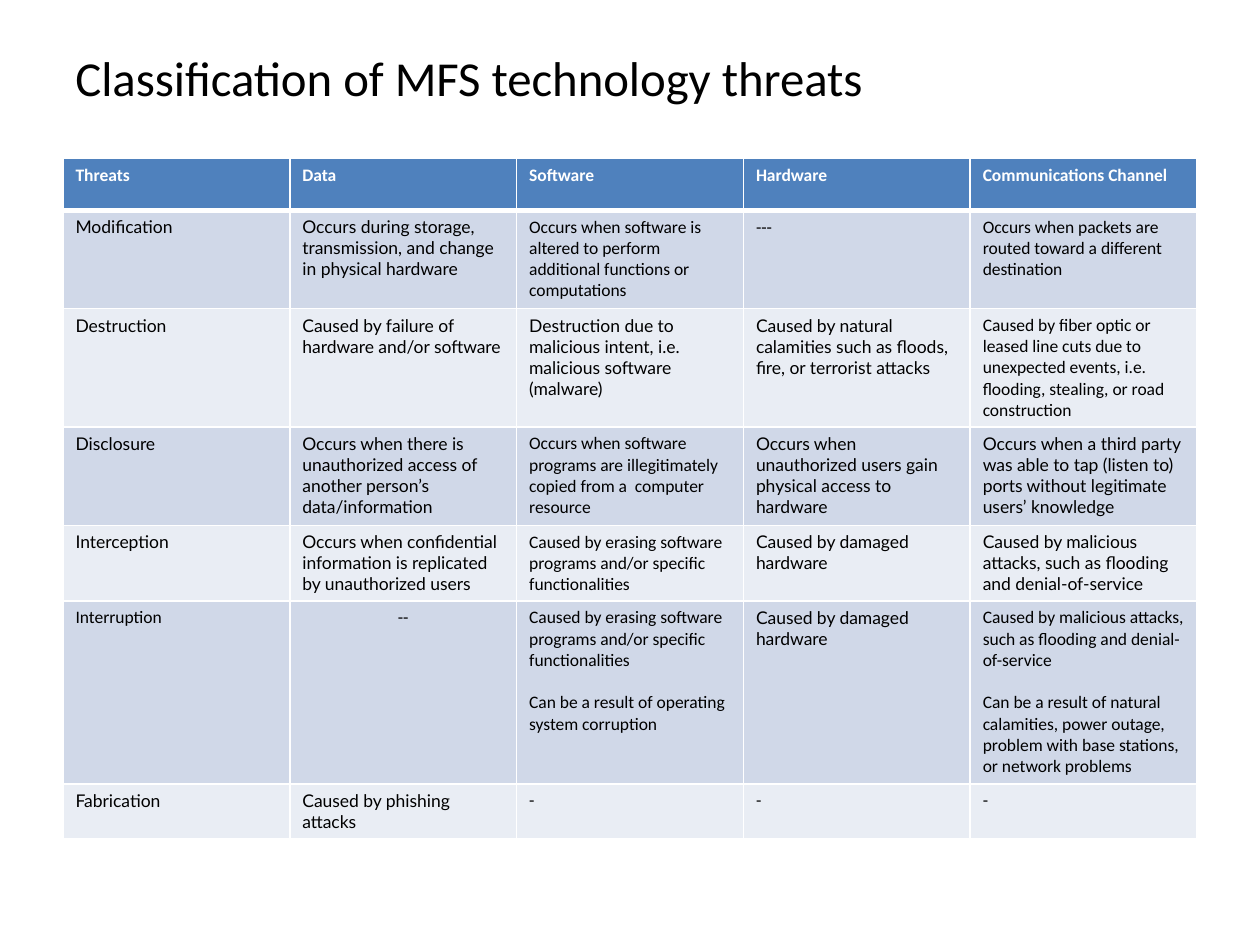
import pptx
import pptx.util
import pptx.dml.color
import pptx.enum.text
import pptx.oxml
import pptx.oxml.ns
from pptx.util import Inches

COLORS = {"white": "FFFFFF", "black": "000000", "header": "4F81BD",
          "odd": "D0D8E8", "even": "E9EDF4"}
CALIBRI, LATO = "Calibri", "Lato"
HEADINGS = ["Threats", "Data", "Software", "Hardware", "Communications Channel"]
ERASING = "Caused by erasing software programs and/or specific functionalities"
DAMAGED = "Caused by damaged hardware"
FLOODING = "Caused by malicious attacks, such as flooding and denial-of-service"

# Row height, fonts by column (C = Calibri, L = Lato), cell texts;
# a list holds the paragraphs of one cell.
THREATS = [
    (0.78, "LLCCC", [
        "Modification",
        "Occurs during storage, transmission, and change in physical hardware",
        "Occurs when software is altered to perform additional functions or computations",
        "---",
        "Occurs when packets are routed toward a different destination"]),
    (0.94, "LLLLC", [
        "Destruction",
        "Caused by failure of hardware and/or software",
        "Destruction due to malicious intent, i.e. malicious software (malware)",
        "Caused by natural calamities such as floods, fire, or terrorist attacks",
        "Caused by fiber optic or leased line cuts due to unexpected events, i.e. "
        "flooding, stealing, or road construction"]),
    (0.78, "LLCLL", [
        "Disclosure",
        "Occurs when there is unauthorized access of another person’s data/information",
        "Occurs when software programs are illegitimately copied from a  computer resource",
        "Occurs when unauthorized users gain physical access to hardware",
        "Occurs when a third party was able to tap (listen to) ports without "
        "legitimate users’ knowledge"]),
    (0.6, "LLCLL", [
        "Interception",
        "Occurs when confidential information is replicated by unauthorized users",
        ERASING, DAMAGED, FLOODING]),
    (1.45, "CCCLC", [
        "Interruption",
        "--",
        [ERASING, "Can be a result of operating system corruption"],
        DAMAGED,
        [FLOODING, "Can be a result of natural calamities, power outage, problem with "
                   "base stations, or network problems"]]),
    (0.43, "LLCCC", ["Fabrication", "Caused by phishing attacks", "-", "-", "-"]),
]


def rgb(name):
    return pptx.dml.color.RGBColor.from_string(COLORS[name])


def add_run(paragraph, text, font, size, color, bold=False):
    run = paragraph.add_run()
    run.text = text
    run.font.name = font
    run.font.size = pptx.util.Pt(size)
    run.font.bold = bold
    run.font.color.rgb = rgb(color)


def set_borders(cell, top, bottom):
    """Draw white borders, 1 pt at the sides and the given points above and below."""
    properties = cell._tc.get_or_add_tcPr()
    sides = [("L", 1), ("R", 1), ("T", top), ("B", bottom)]
    for index, (side, width) in enumerate(sides):
        line = pptx.oxml.parse_xml(
            f'<a:ln{side} {pptx.oxml.ns.nsdecls("a")} w="{pptx.util.Pt(width)}">'
            f'<a:solidFill><a:srgbClr val="{COLORS["white"]}"/></a:solidFill>'
            f'</a:ln{side}>')
        properties.insert(index, line)


def fill_cell(cell, paragraphs, font, fill, color, bold=False):
    cell.fill.solid()
    cell.fill.fore_color.rgb = rgb(fill)
    frame = cell.text_frame
    for index, text in enumerate(paragraphs):
        paragraph = frame.add_paragraph() if index else frame.paragraphs[0]
        if index:
            paragraph.space_before = pptx.util.Pt(12.2)
        if text == "--":
            paragraph.alignment = pptx.enum.text.PP_ALIGN.CENTER
        add_run(paragraph, text, font, 10, color, bold)


def add_title(slide, left, top, width, height):
    frame = slide.shapes.add_textbox(left, top, width, height).text_frame
    frame.word_wrap = True
    frame.vertical_anchor = pptx.enum.text.MSO_ANCHOR.MIDDLE
    add_run(frame.paragraphs[0], "Classification of MFS technology threats",
            CALIBRI, 27.9, "black")


def add_threat_table(slide, left, top, width, header_height):
    heights = [header_height] + [Inches(height) for height, _, _ in THREATS]
    table = slide.shapes.add_table(len(heights), len(HEADINGS), left, top,
                                   width, sum(heights)).table
    for row, height in zip(table.rows, heights):
        row.height = height
    for column, heading in enumerate(HEADINGS):
        table.columns[column].width = width // len(HEADINGS)
        cell = table.cell(0, column)
        fill_cell(cell, [heading], CALIBRI, "header", "white", bold=True)
        set_borders(cell, 1, 3)
    for row, (_, fonts, texts) in enumerate(THREATS, start=1):
        for column, (code, text) in enumerate(zip(fonts, texts)):
            cell = table.cell(row, column)
            fill_cell(cell, text if isinstance(text, list) else [text],
                      CALIBRI if code == "C" else LATO,
                      "odd" if row % 2 else "even", "black")
            set_borders(cell, 3 if row == 1 else 1, 1)


def main():
    presentation = pptx.Presentation()
    presentation.slide_width = Inches(10)
    presentation.slide_height = Inches(7.5)
    slide = presentation.slides.add_slide(presentation.slide_layouts[6])
    add_title(slide, Inches(0.5), Inches(0.3), Inches(9), Inches(0.62))
    add_threat_table(slide, Inches(0.5), Inches(1.26), Inches(9), Inches(0.41))
    presentation.save("out.pptx")


if __name__ == "__main__":
    main()
